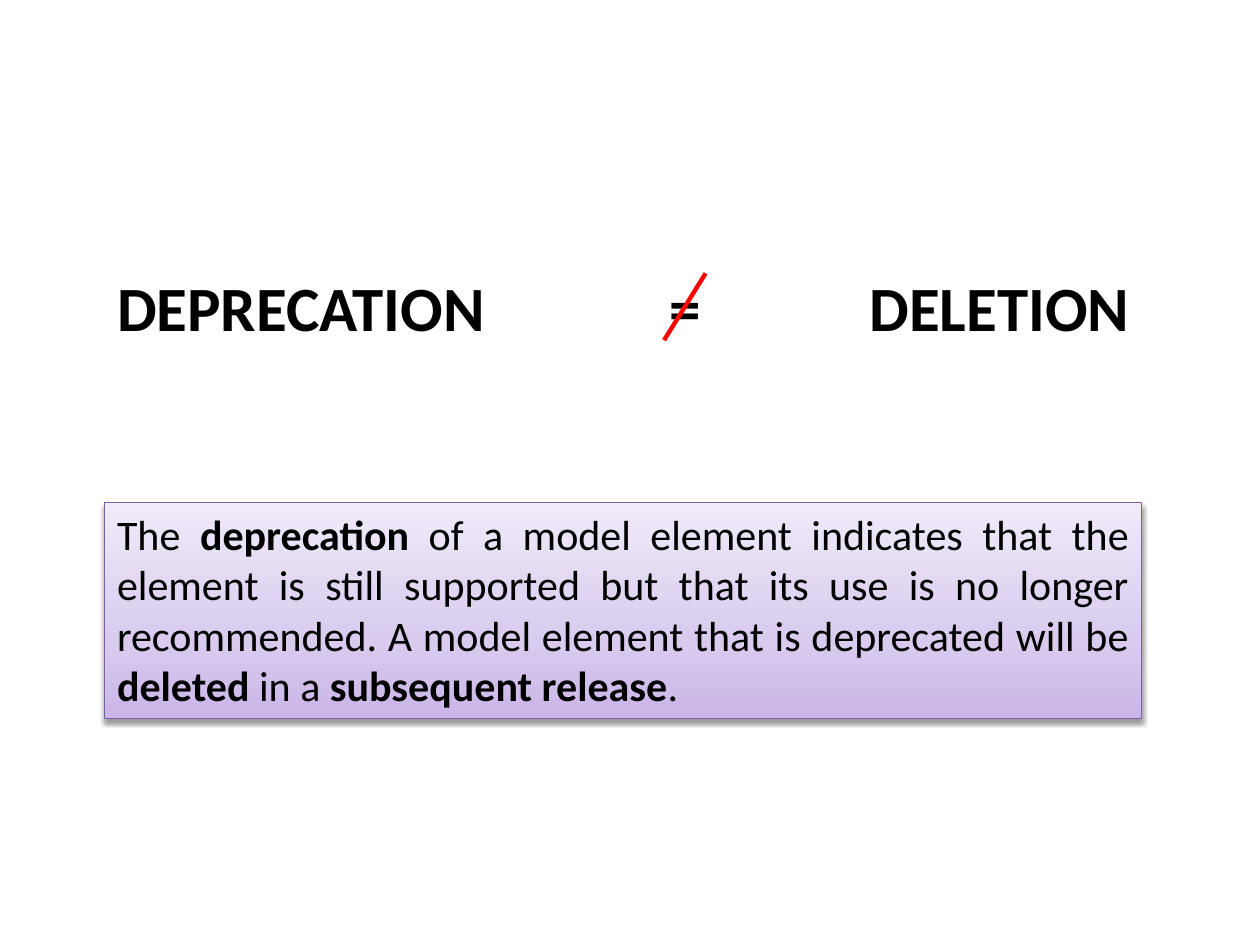
"""Build a slide stating that deprecation is not the same as deletion."""
from copy import deepcopy

from lxml.etree import SubElement as Sub
from pptx import Presentation
from pptx.dml.color import RGBColor as RGB
from pptx.enum.shapes import MSO_CONNECTOR as LINE, MSO_SHAPE as SHAPE
from pptx.enum.text import MSO_ANCHOR as ANCHOR, MSO_AUTO_SIZE as SIZE, PP_ALIGN as ALIGN
from pptx.oxml.ns import qn
from pptx.util import Pt

BLACK = RGB(0, 0, 0)
RED = RGB(255, 0, 0)
PURPLE = RGB(0x7D, 0x60, 0xA0)
STOPS = [
    (0, RGB(0xC9, 0xB5, 0xE8)),
    (0.35, RGB(0xD8, 0xCB, 0xEE)),
    (1, RGB(0xF0, 0xEA, 0xF9)),
]
FONT = "Calibri"

LEFT, RIGHT = 59.8, 652.4
TOP, HIGH = 149.8, 51
WORDS = [
    ("DEPRECATION", LEFT, 293, ALIGN.LEFT),
    ("DELETION", RIGHT - 257.8, 257.8, ALIGN.RIGHT),
    ("=", 371.5, 39.6, ALIGN.CENTER),
]
SLASH = (379.5, 194.4, 403.2, 156.2)
NOTE_TOP, NOTE_HIGH = 287.1, 123.6
NOTE = [
    ("The ", False),
    ("deprecation", True),
    (" of a model element indicates that the element is still supported "
     "but that its use is no longer recommended. "
     "A model element that is deprecated will be ", False),
    ("deleted", True),
    (" in a ", False),
    ("subsequent release", True),
    (".", False),
]


def write(shape, runs, size, align):
    frame = shape.text_frame
    frame.word_wrap = True
    frame.auto_size = SIZE.SHAPE_TO_FIT_TEXT
    frame.vertical_anchor = ANCHOR.TOP
    para = frame.paragraphs[0]
    para.alignment = align
    for text, bold in runs:
        run = para.add_run()
        run.text = text
        font = run.font
        font.name, font.size, font.bold = FONT, Pt(size), bold
        font.color.rgb = BLACK


def shade(shape):
    fill = shape.fill
    fill.gradient()
    fill.gradient_angle = 90
    stops = shape._element.spPr.find(".//" + qn("a:gsLst"))
    stops.append(deepcopy(stops[-1]))
    for stop, (place, color) in zip(fill.gradient_stops, STOPS):
        stop.position = place
        stop.color.rgb = color


def cast(shape):
    shape.shadow.inherit = False
    effect = shape._element.spPr.find(qn("a:effectLst"))
    shadow = Sub(effect, qn("a:outerShdw"), blurRad=str(Pt(3.1)),
                 dist=str(Pt(1.6)), dir="5400000", rotWithShape="0")
    color = Sub(shadow, qn("a:srgbClr"), val=str(BLACK))
    Sub(color, qn("a:alpha"), val="38000")


def main():
    deck = Presentation()
    deck.slide_width, deck.slide_height = Pt(720), Pt(540)
    shapes = deck.slides.add_slide(deck.slide_layouts[6]).shapes

    for text, left, width, align in WORDS:
        box = shapes.add_textbox(Pt(left), Pt(TOP), Pt(width), Pt(HIGH))
        write(box, [(text, True)], 36, align)

    slash = shapes.add_connector(LINE.STRAIGHT, *map(Pt, SLASH))
    slash.line.color.rgb = RED
    slash.line.width = Pt(2.5)
    Sub(slash._element.spPr, qn("a:effectLst"))

    note = shapes.add_shape(SHAPE.RECTANGLE, Pt(LEFT), Pt(NOTE_TOP),
                            Pt(RIGHT - LEFT), Pt(NOTE_HIGH))
    shade(note)
    note.line.color.rgb = PURPLE
    note.line.width = Pt(0.75)
    cast(note)
    write(note, NOTE, 24, ALIGN.JUSTIFY)

    deck.save("out.pptx")


if __name__ == "__main__":
    main()
